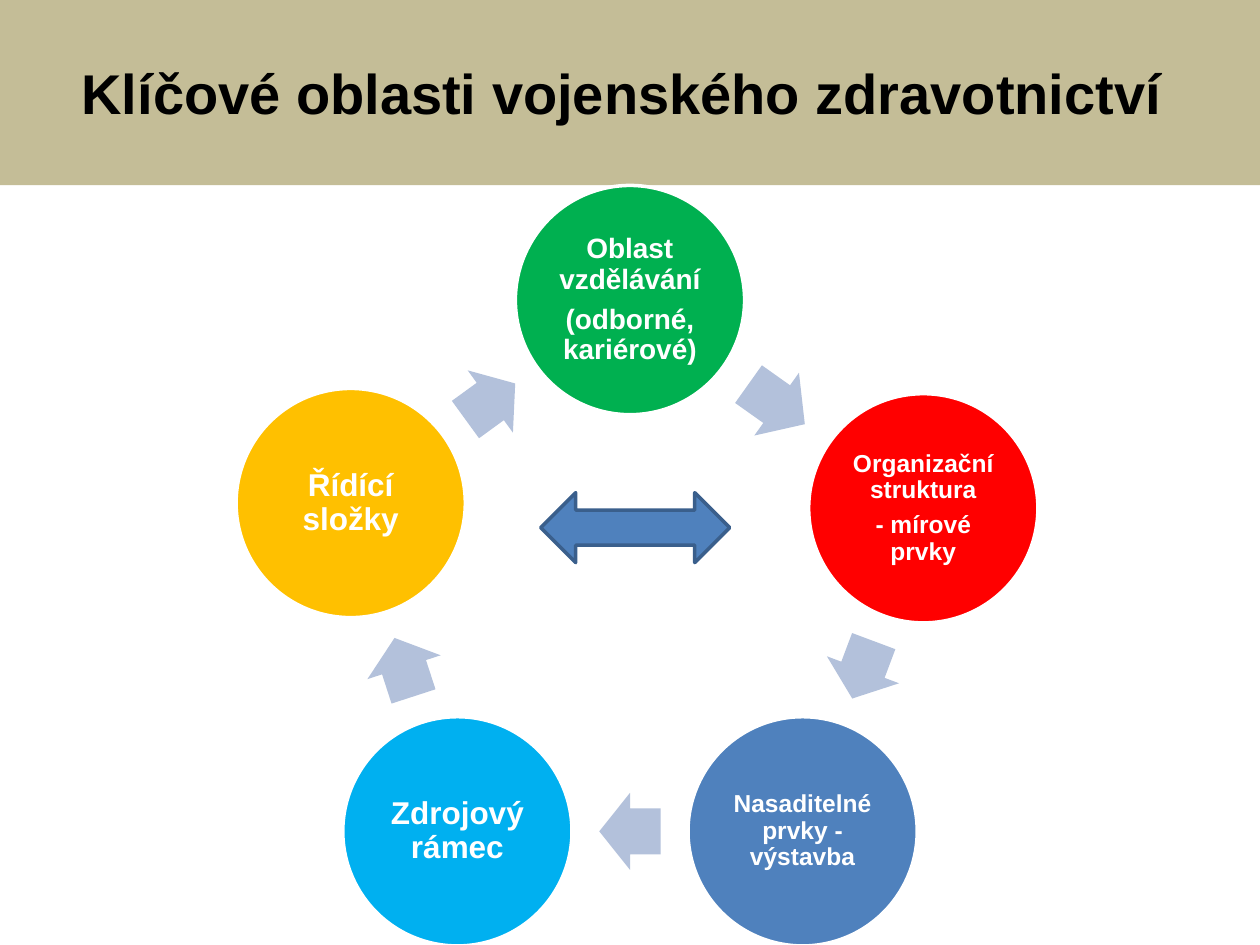
from dataclasses import dataclass
from math import atan2, cos, degrees, hypot, pi, sin

from pptx import Presentation
from pptx.dml.color import RGBColor
from pptx.enum.shapes import MSO_SHAPE
from pptx.enum.text import MSO_ANCHOR, PP_ALIGN
from pptx.util import Pt


@dataclass(frozen=True)
class Theme:
    font: str = "Arial"
    title_size: int = 32
    line_width: int = 2
    black: str = "000000"
    white: str = "FFFFFF"
    band: str = "C4BD97"
    blue: str = "4F81BD"
    dark_blue: str = "3A5F8C"
    pale_blue: str = "B3C1DB"
    green: str = "00B050"
    red: str = "FF0000"
    sky: str = "00B0F0"
    amber: str = "FFC000"


THEME = Theme()
DIAMETER = 131
ARROW_HEIGHT = 44
ARROW_SHARE = 0.53  # part of the gap between two circles

# paragraphs, text size, fill, shift from the regular place on the ring
AREAS = [
    (["Oblast vzdělávání", "(odborné, kariérové)"], 16, THEME.green, (0, 0)),
    (["Organizační struktura", "- mírové prvky"], 14, THEME.red, (8, 3)),
    (["Nasaditelné prvky - výstavba"], 14, THEME.blue, (0, 0)),
    (["Zdrojový rámec"], 18, THEME.sky, (0, 0)),
    (["Řídící složky"], 18, THEME.amber, (0, 0)),
]


def add_filled(slide, preset, box, fill, outline=None):
    shape = slide.shapes.add_shape(preset, *(Pt(round(v, 2)) for v in box))
    shape.shadow.inherit = False
    shape.fill.solid()
    shape.fill.fore_color.rgb = RGBColor.from_string(fill)
    if outline:
        shape.line.color.rgb = RGBColor.from_string(outline)
        shape.line.width = Pt(THEME.line_width)
    else:
        shape.line.fill.background()
    return shape


def set_text(shape, lines, size, color, spacing, margins):
    frame = shape.text_frame
    frame_format = {"word_wrap": True, "vertical_anchor": MSO_ANCHOR.MIDDLE, **margins}
    for name, value in frame_format.items():
        setattr(frame, name, value)
    font_format = {"name": THEME.font, "size": Pt(size), "bold": True}
    for index, line in enumerate(lines):
        paragraph = frame.add_paragraph() if index else frame.paragraphs[0]
        paragraph.text = line
        for name, value in {"alignment": PP_ALIGN.CENTER, **spacing}.items():
            setattr(paragraph, name, value)
        for name, value in font_format.items():
            setattr(paragraph.font, name, value)
        paragraph.font.color.rgb = RGBColor.from_string(color)


def add_title_band(slide, box):
    band = add_filled(slide, MSO_SHAPE.RECTANGLE, box, THEME.band)
    set_text(band, ["Klíčové oblasti vojenského zdravotnictví "], THEME.title_size,
             THEME.black, {"space_after": Pt(5)}, {})


def add_area(slide, center, lines, size, fill):
    x, y = center
    box = (x - DIAMETER / 2, y - DIAMETER / 2, DIAMETER, DIAMETER)
    circle = add_filled(slide, MSO_SHAPE.OVAL, box, fill, THEME.white)
    sides = ("left", "top", "right", "bottom")
    set_text(circle, lines, size, THEME.white,
             {"line_spacing": 0.9, "space_after": Pt(round(0.35 * size, 1))},
             {f"margin_{side}": Pt(1.5) for side in sides})


def add_step_arrow(slide, start, end):
    """Arrow halfway between two circle centers, pointing to the second."""
    dx, dy = end[0] - start[0], end[1] - start[1]
    width = ARROW_SHARE * (hypot(dx, dy) - DIAMETER)
    box = (start[0] + dx / 2 - width / 2, start[1] + dy / 2 - ARROW_HEIGHT / 2,
           width, ARROW_HEIGHT)
    arrow = add_filled(slide, MSO_SHAPE.RIGHT_ARROW, box, THEME.pale_blue)
    arrow.adjustments[0] = 0.6
    arrow.adjustments[1] = 0.5
    arrow.rotation = round(degrees(atan2(dy, dx)) % 360, 1)


def add_cycle(slide, box):
    """Ring of areas whose first circle touches the top of the box."""
    left, top, width, _ = box
    radius = 167.8
    middle_x, middle_y = left + width / 2, top + DIAMETER / 2 + radius
    centers = []
    for index, (*_, (shift_x, shift_y)) in enumerate(AREAS):
        angle = 2 * pi * index / len(AREAS) - pi / 2
        centers.append((middle_x + radius * cos(angle) + shift_x,
                        middle_y + radius * sin(angle) + shift_y))
    for index, (lines, size, fill, _) in enumerate(AREAS):
        add_area(slide, centers[index], lines, size, fill)
        add_step_arrow(slide, centers[index], centers[(index + 1) % len(AREAS)])
    add_filled(slide, MSO_SHAPE.LEFT_RIGHT_ARROW,
               (middle_x - 51, top + 175.5, 108, 40), THEME.blue, THEME.dark_blue)


def main():
    presentation = Presentation()
    presentation.slide_width, presentation.slide_height = Pt(720), Pt(540)
    slide = presentation.slides.add_slide(presentation.slide_layouts[6])
    add_title_band(slide, (0, 0, 720, 105.8))
    add_cycle(slide, (0, 106, 720, 434))
    presentation.save("out.pptx")


if __name__ == "__main__":
    main()
